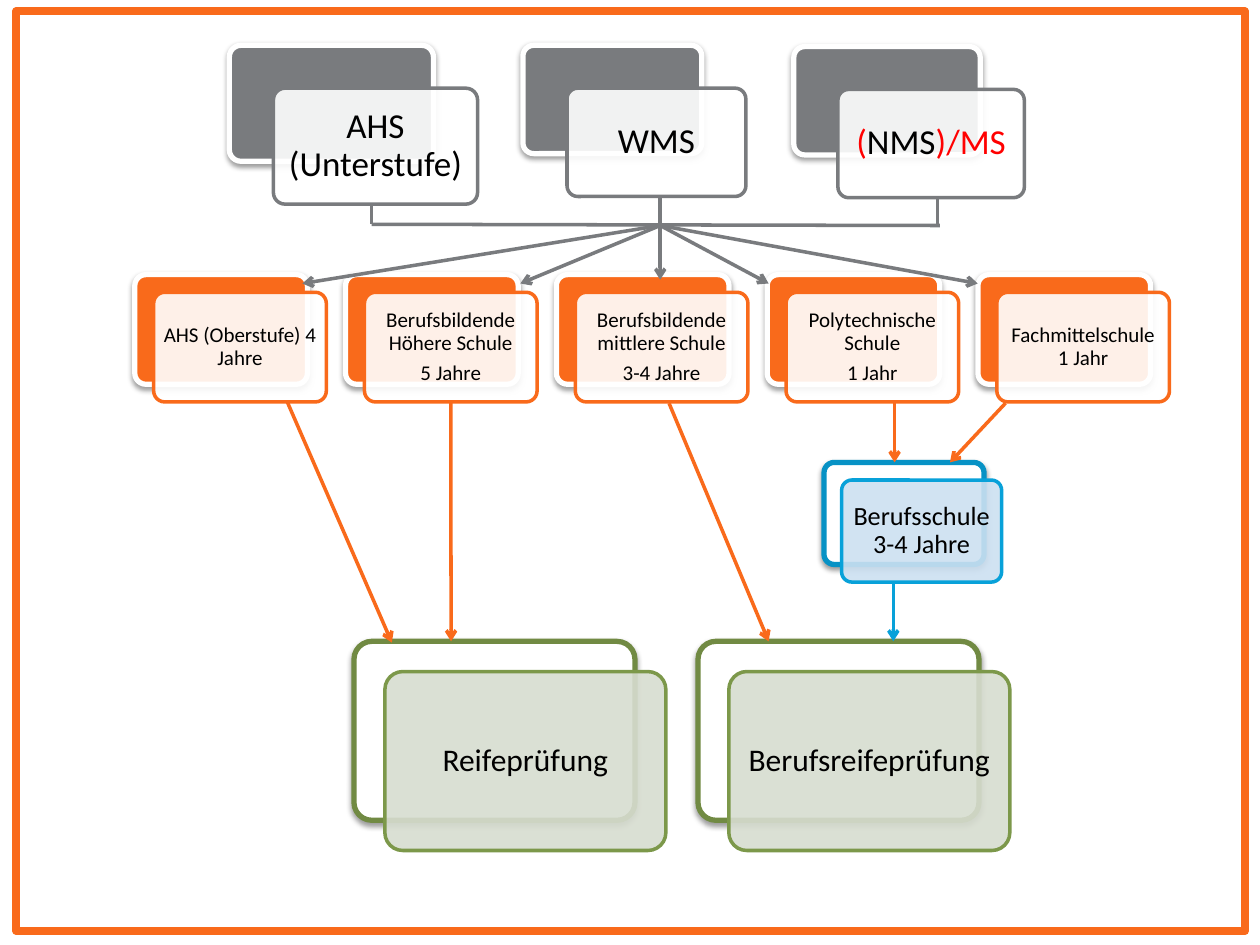
from lxml.etree import SubElement
from pptx import Presentation
from pptx.dml.color import RGBColor
from pptx.enum.shapes import MSO_CONNECTOR, MSO_SHAPE
from pptx.enum.text import MSO_ANCHOR, PP_ALIGN
from pptx.oxml.ns import qn
from pptx.util import Inches, Pt

GREY, ORANGE, BLUE, GREEN = "797B7E", "F96A1B", "08A1D9", "7C984A"
BLACK, RED, WHITE = "000000", "FF0000", "FFFFFF"

# Content: each card is a list of paragraphs, each paragraph a list of (text, colour)
LOWER_SCHOOLS = [  # left, top, width, height, text
    (1.82, 0.36, 1.62, 0.92, [[("AHS (Unterstufe)", BLACK)]]),
    (4.15, 0.36, 1.42, 0.86, [[("WMS", BLACK)]]),
    (6.30, 0.37, 1.48, 0.86, [[("(", RED), ("NMS", BLACK), (")/MS", RED)]]),
]
UPPER_SCHOOLS = [
    ["AHS (Oberstufe) 4 Jahre"],
    ["Berufsbildende Höhere Schule", "5 Jahre"],
    ["Berufsbildende mittlere Schule", "3-4 Jahre"],
    ["Polytechnische Schule", "1 Jahr"],
    ["Fachmittelschule 1 Jahr"],
]
VOCATIONAL_SCHOOL = ["Berufsschule 3-4 Jahre"]
EXAMS = ["Reifeprüfung", "Berufsreifeprüfung"]

# Card looks: back fill, back line, front fill, front line, offset, text size, inset
LOWER = (GREY, WHITE, WHITE, GREY, (0.35, 0.34), 20, 0.08)
UPPER = (ORANGE, WHITE, WHITE, ORANGE, (0.15, 0.14), 12, 0.05)
VOCATIONAL = (WHITE, "0792C5", "CCE0F1", BLUE, (0.14, 0.14), 15, 0.06)
EXAM = (WHITE, "718A43", "D7DDD0", GREEN, (0.245, 0.24), 18, 0.07)

# Lines: start, end
HUB = (5.24, 1.79)
COLLECTORS = [
    ((2.95, 1.62), (2.95, 1.78)),
    ((5.24, 1.56), (5.24, 1.78)),
    ((7.44, 1.56), (7.44, 1.78)),
    ((2.95, 1.78), (7.46, 1.79)),
]
HUB_TARGETS = [(2.4, 2.25), (4.13, 2.25), (6.1, 2.25), (7.76, 2.25), (5.24, 2.22)]
SCHOOL_ARROWS = [
    ((5.31, 3.2), (6.1, 5.09)),
    ((7.1, 3.2), (7.1, 3.67)),
    ((7.98, 3.2), (7.54, 3.67)),
    ((2.28, 3.19), (3.11, 5.1)),
]
VOCATIONAL_ARROW = ((7.09, 4.62), (7.09, 5.09))
HIGHER_SCHOOL_ARROW = ((3.58, 3.19), (3.58, 5.09))


def colour(hex_value):
    return RGBColor.from_string(hex_value)


def add_shadow(shape):
    effects = shape._element.spPr.find(qn("a:effectLst"))
    outer = SubElement(effects, qn("a:outerShdw"), blurRad=str(Pt(3.1)),
                       dist=str(Pt(1.6)), dir="5400000", rotWithShape="0")
    black = SubElement(outer, qn("a:srgbClr"), val=BLACK)
    SubElement(black, qn("a:alpha"), val="38000")


def add_box(kind, left, top, width, height, fill, line, weight):
    box = slide.shapes.add_shape(
        kind, Inches(left), Inches(top), Inches(width), Inches(height))
    box.shadow.inherit = False
    if fill:
        box.fill.solid()
        box.fill.fore_color.rgb = colour(fill)
    else:
        box.fill.background()
    box.line.color.rgb = colour(line)
    box.line.width = Pt(weight)
    if kind == MSO_SHAPE.ROUNDED_RECTANGLE:
        box.adjustments[0] = 0.1
    return box


def add_card(left, top, width, height, paragraphs, look):
    """A shadowed back plate with a translucent text card shifted over it."""
    back_fill, back_line, front_fill, front_line, (dx, dy), size, inset = look
    rounded = MSO_SHAPE.ROUNDED_RECTANGLE
    back = add_box(rounded, left, top, width, height, back_fill, back_line, 3)
    add_shadow(back)
    card = add_box(rounded, left + dx, top + dy, width, height,
                   front_fill, front_line, 2)
    front_colour = card._element.spPr.find(qn("a:solidFill"))[0]
    SubElement(front_colour, qn("a:alpha"), val="90000")

    frame = card.text_frame
    frame.word_wrap = True
    frame.vertical_anchor = MSO_ANCHOR.MIDDLE
    frame.margin_left = frame.margin_right = Inches(inset)
    frame.margin_top = frame.margin_bottom = Inches(inset)
    for i, runs in enumerate(paragraphs):
        paragraph = frame.add_paragraph() if i else frame.paragraphs[0]
        paragraph.alignment = PP_ALIGN.CENTER
        paragraph.line_spacing = 0.9
        paragraph.space_after = Pt(round(0.35 * size, 1))
        paragraph.font.size = Pt(size)
        paragraph.font.name = "Calibri"
        for text, text_colour in runs:
            run = paragraph.add_run()
            run.text = text
            run.font.color.rgb = colour(text_colour)
    return card


def black_text(lines):
    return [[(line, BLACK)] for line in lines]


def add_line(start, end, line_colour, arrow=True):
    line = slide.shapes.add_connector(
        MSO_CONNECTOR.STRAIGHT, *(Inches(v) for v in (*start, *end)))
    line.line.color.rgb = colour(line_colour)
    line.line.width = Pt(2)
    if arrow:
        SubElement(line.line._get_or_add_ln(), qn("a:tailEnd"), type="arrow")
    SubElement(line._element.spPr, qn("a:effectLst"))
    return line


prs = Presentation()
prs.slide_width, prs.slide_height = Inches(10), Inches(7.5)
slide = prs.slides.add_slide(prs.slide_layouts[6])

# Cards, level by level
for *place, text in LOWER_SCHOOLS:
    add_card(*place, text, LOWER)
upper_cards = [
    add_card(1.07 + 1.673 * i, 2.18, 1.37, 0.87, black_text(lines), UPPER)
    for i, lines in enumerate(UPPER_SCHOOLS)
]
add_card(6.54, 3.67, 1.27, 0.81, black_text(VOCATIONAL_SCHOOL), VOCATIONAL)
for i, exam in enumerate(EXAMS):
    add_card(2.81 + 2.73 * i, 5.09, 2.23, 1.42, black_text([exam]), EXAM)

# Lines from the lower schools, through the hub, to the upper schools
for start, end in COLLECTORS:
    add_line(start, end, GREY, arrow=False)
for target in HUB_TARGETS:
    add_line(HUB, target, GREY)

# Arrows onward to the exams
for start, end in SCHOOL_ARROWS:
    add_line(start, end, ORANGE)
add_line(*VOCATIONAL_ARROW, BLUE)
add_line(*HIGHER_SCHOOL_ARROW, ORANGE).begin_connect(upper_cards[1], 2)

# Frame around the slide
add_box(MSO_SHAPE.RECTANGLE, 0.13, 0.09, 9.75, 7.3, None, ORANGE, 4.5)

prs.save("out.pptx")
